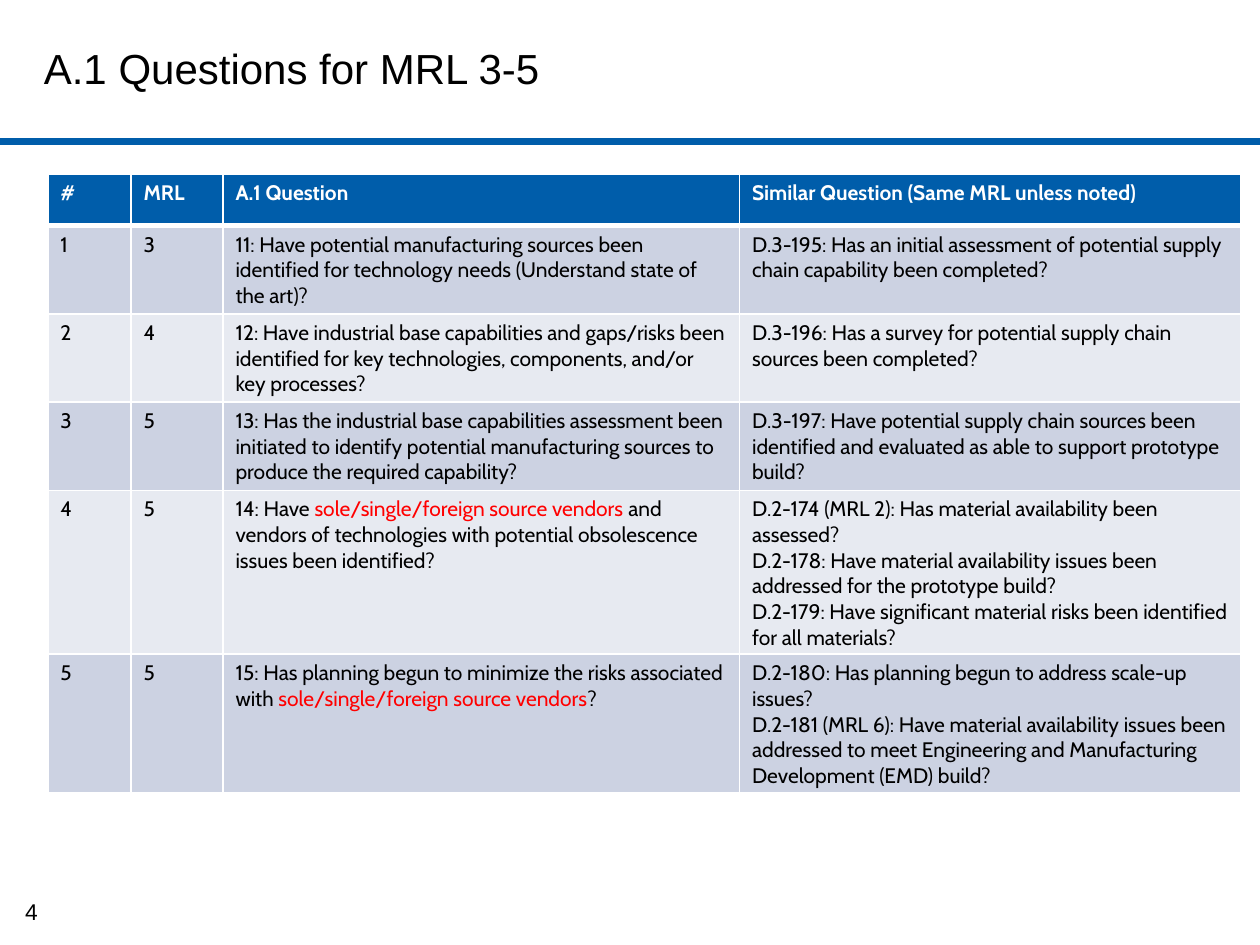
from lxml import etree
from pptx import Presentation
from pptx.dml.color import RGBColor
from pptx.enum.shapes import MSO_CONNECTOR
from pptx.enum.text import MSO_ANCHOR, PP_ALIGN
from pptx.oxml.ns import qn
from pptx.util import Inches, Pt

LINE = MSO_CONNECTOR.STRAIGHT
MID, TOP = MSO_ANCHOR.MIDDLE, MSO_ANCHOR.TOP
LEFT, CENTER = PP_ALIGN.LEFT, PP_ALIGN.CENTER

# Content
TITLE = "A.1 Questions for MRL 3-5"
PAGE = "4"
KEY = "sole/single/foreign source vendors"
HEAD = ("#", "MRL", "A.1 Question", "Similar Question (Same MRL unless noted)")
ROWS = [
    ("1", "3",
     "11: Have potential manufacturing sources been identified for technology "
     "needs (Understand state of the art)?",
     "D.3-195: Has an initial assessment of potential supply chain capability "
     "been completed?"),
    ("2", "4",
     "12: Have industrial base capabilities and gaps/risks been identified for "
     "key technologies, components, and/or key processes?",
     "D.3-196: Has a survey for potential supply chain sources been completed?"),
    ("3", "5",
     "13: Has the industrial base capabilities assessment been initiated to "
     "identify potential manufacturing sources to produce the required capability?",
     "D.3-197: Have potential supply chain sources been identified and evaluated "
     "as able to support prototype build?"),
    ("4", "5",
     f"14: Have {KEY} and vendors of technologies with potential obsolescence "
     "issues been identified?",
     "D.2-174 (MRL 2): Has material availability been assessed?\n"
     "D.2-178: Have material availability issues been addressed for the "
     "prototype build?\n"
     "D.2-179: Have significant material risks been identified for all materials?"),
    ("5", "5",
     f"15: Has planning begun to minimize the risks associated with {KEY}?",
     "D.2-180: Has planning begun to address scale-up issues?\n"
     "D.2-181 (MRL 6): Have material availability issues been addressed to meet "
     "Engineering and Manufacturing Development (EMD) build?"),
]

# Look
COLORS = {"blue": "005DAA", "odd": "CCD2E2", "even": "E7EAF1",
          "black": "000000", "white": "FFFFFF", "red": "FF0000"}
WIDE, HIGH = 10, 7.5
COLS = (0.66, 0.73, 4.1, 3.98)
ROW = 0.41


def color(name):
    return RGBColor.from_string(COLORS[name])


def write(frame, text, font="Arial", size=12, ink="black", bold=False,
          align=LEFT, anchor=TOP, wrap=True):
    """Fill a text frame, one paragraph a line, with the key phrase in red."""
    frame.word_wrap = wrap
    frame.vertical_anchor = anchor
    for i, line in enumerate(text.split("\n")):
        para = frame.add_paragraph() if i else frame.paragraphs[0]
        para.alignment = align
        before, key, after = line.partition(KEY)
        for part, tint in ((before, ink), (key, "red"), (after, ink)):
            if part:
                run = para.add_run()
                run.text = part
                run.font.name, run.font.size = font, Pt(size)
                run.font.bold = bold
                run.font.color.rgb = color(tint)


def add_text(slide, text, box, **form):
    shape = slide.shapes.add_textbox(*map(Inches, box))
    write(shape.text_frame, text, **form)


def edge(cell, side, width):
    props = cell._tc.get_or_add_tcPr()
    line = etree.SubElement(props, qn(f"a:ln{side}"), w=str(Pt(width)))
    fill = etree.SubElement(line, qn("a:solidFill"))
    etree.SubElement(fill, qn("a:srgbClr"), val=COLORS["white"])


deck = Presentation()
deck.slide_width, deck.slide_height = Inches(WIDE), Inches(HIGH)
slide = deck.slides.add_slide(deck.slide_layouts[6])

# Rule below the title
rule = slide.shapes.add_connector(
    LINE, 0, Inches(HIGH * 0.15), Inches(WIDE), Inches(HIGH * 0.15))
rule.line.color.rgb = color("blue")
rule.line.width = Pt(3.75)
etree.SubElement(rule._element.spPr, qn("a:effectLst"))

# Title and page number
add_text(slide, TITLE, (0.25, 0.08, 7.33, 0.92), size=24, anchor=MID)
add_text(slide, PAGE, (0.03, 7.08, 0.44, 0.33), size=13, align=CENTER, wrap=False)

# Table of questions
data = [HEAD] + ROWS
table = slide.shapes.add_table(
    len(data), len(COLS), Inches(0.38), Inches(1.38),
    Inches(sum(COLS)), Inches(ROW * len(data))).table
for col, width in zip(table.columns, COLS):
    col.width = Inches(width)
for r, row in enumerate(data):
    table.rows[r].height = Inches(ROW)
    head = r == 0
    back = "blue" if head else "odd" if r % 2 else "even"
    for c, text in enumerate(row):
        cell = table.cell(r, c)
        for side in "LRTB":
            thick = (head and side == "B") or (r == 1 and side == "T")
            edge(cell, side, 3 if thick else 1)
        cell.fill.solid()
        cell.fill.fore_color.rgb = color(back)
        write(cell.text_frame, text, font="Cabin", bold=head,
              ink="white" if head else "black")

deck.save("out.pptx")
